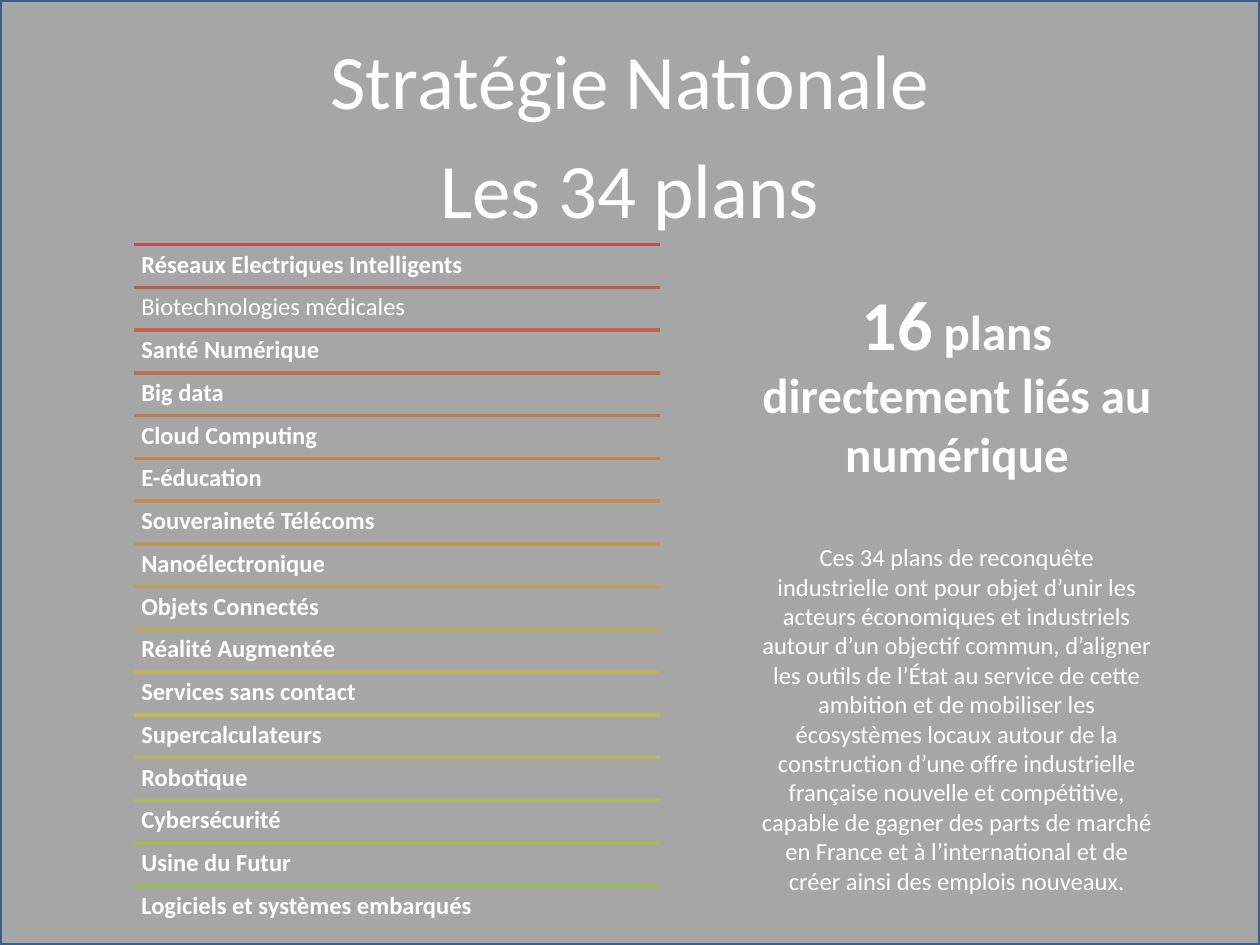
from colorsys import hls_to_rgb, rgb_to_hls
from dataclasses import dataclass

from lxml import etree
from pptx import Presentation
from pptx.dml.color import RGBColor
from pptx.enum.shapes import MSO_CONNECTOR, MSO_SHAPE
from pptx.enum.text import MSO_ANCHOR, PP_ALIGN
from pptx.oxml.ns import qn
from pptx.util import Cm, Pt

STRAIGHT = MSO_CONNECTOR.STRAIGHT
RECTANGLE = MSO_SHAPE.RECTANGLE
TOP, MIDDLE = MSO_ANCHOR.TOP, MSO_ANCHOR.MIDDLE
LEFT, CENTER = PP_ALIGN.LEFT, PP_ALIGN.CENTER

FONT = "Calibri"
COLORS = {
    "background": "A6A6A6",
    "border": "3A5F8C",
    "text": "FFFFFF",
    "first_line": "C0504D",
    "last_line": "9BBB59",
}
SLIDE_WIDTH, SLIDE_HEIGHT = 25.4, 19.05
LIST_LEFT, LIST_WIDTH = 2.7, 10.6
LIST_TOP, LIST_BOTTOM = 4.93, 18.72


@dataclass
class Box:
    left: float
    top: float
    width: float
    height: float


@dataclass
class Plan:
    name: str
    bold: bool = True


@dataclass
class TextRun:
    text: str
    size: int
    bold: bool = False


PLANS = [
    Plan("Réseaux Electriques Intelligents"),
    Plan("Biotechnologies médicales", bold=False),
    Plan("Santé Numérique"),
    Plan("Big data"),
    Plan("Cloud Computing"),
    Plan("E-éducation"),
    Plan("Souveraineté Télécoms"),
    Plan("Nanoélectronique"),
    Plan("Objets Connectés"),
    Plan("Réalité Augmentée"),
    Plan("Services sans contact"),
    Plan("Supercalculateurs"),
    Plan("Robotique"),
    Plan("Cybersécurité"),
    Plan("Usine du Futur"),
    Plan("Logiciels et systèmes embarqués"),
]
HEADLINE = [
    TextRun("16", 40, bold=True),
    TextRun(" plans directement liés au numérique", 28, bold=True),
]
EXPLANATION = TextRun(
    "Ces 34 plans de reconquête industrielle ont pour objet d’unir les acteurs "
    "économiques et industriels autour d’un objectif commun, d’aligner les outils "
    "de l’État au service de cette ambition et de mobiliser les écosystèmes locaux "
    "autour de la construction d’une offre industrielle française nouvelle et "
    "compétitive, capable de gagner des parts de marché en France et à "
    "l’international et de créer ainsi des emplois nouveaux.",
    14,
)


def blend(start: str, end: str, share: float) -> str:
    first, last = (
        rgb_to_hls(*(channel / 255 for channel in RGBColor.from_string(color)))
        for color in (start, end)
    )
    mixed = [low + (high - low) * share for low, high in zip(first, last)]
    return "".join(f"{round(channel * 255):02X}" for channel in hls_to_rgb(*mixed))


def add_background(slide) -> None:
    shape = slide.shapes.add_shape(RECTANGLE, 0, 0, Cm(SLIDE_WIDTH), Cm(SLIDE_HEIGHT))
    shape.shadow.inherit = False
    shape.fill.solid()
    shape.fill.fore_color.rgb = RGBColor.from_string(COLORS["background"])
    shape.line.color.rgb = RGBColor.from_string(COLORS["border"])
    shape.line.width = Pt(2)


def add_text(
    shapes,
    box: Box,
    paragraphs: list[list[TextRun]],
    alignment=CENTER,
    anchor=TOP,
    margin: float | None = None,
    line_spacing: float = 1.0,
    gap: int = 0,
) -> None:
    shape = shapes.add_textbox(Cm(box.left), Cm(box.top), Cm(box.width), Cm(box.height))
    frame = shape.text_frame
    frame.word_wrap = True
    frame.vertical_anchor = anchor
    if margin is not None:
        frame.margin_left = frame.margin_right = Cm(margin)
        frame.margin_top = frame.margin_bottom = Cm(margin)
    for index, runs in enumerate(paragraphs):
        paragraph = frame.add_paragraph() if index else frame.paragraphs[0]
        paragraph.alignment = alignment
        paragraph.line_spacing = line_spacing
        if index:
            paragraph.space_before = Pt(gap)
        for item in runs:
            run = paragraph.add_run()
            run.text = item.text
            run.font.name = FONT
            run.font.size = Pt(item.size)
            run.font.bold = item.bold
            run.font.color.rgb = RGBColor.from_string(COLORS["text"])


def add_rule(shapes, top: float, color: str) -> None:
    connector = shapes.add_connector(
        STRAIGHT, Cm(LIST_LEFT), Cm(top), Cm(LIST_LEFT + LIST_WIDTH), Cm(top)
    )
    connector.line.color.rgb = RGBColor.from_string(color)
    connector.line.width = Pt(2)
    etree.SubElement(connector._element.spPr, qn("a:effectLst"))


def add_plan_list(slide) -> None:
    group = slide.shapes.add_group_shape()
    row_height = (LIST_BOTTOM - LIST_TOP) / len(PLANS)
    for index, plan in enumerate(PLANS):
        top = LIST_TOP + index * row_height
        share = index / (len(PLANS) - 1)
        add_rule(group.shapes, top, blend(COLORS["first_line"], COLORS["last_line"], share))
        add_text(
            group.shapes,
            Box(LIST_LEFT, top, LIST_WIDTH, row_height),
            [[TextRun(plan.name, 14, plan.bold)]],
            alignment=LEFT,
            margin=0.15,
            line_spacing=0.9,
        )


def main() -> None:
    presentation = Presentation()
    presentation.slide_width = Cm(SLIDE_WIDTH)
    presentation.slide_height = Cm(SLIDE_HEIGHT)
    slide = presentation.slides.add_slide(presentation.slide_layouts[6])
    add_background(slide)
    add_text(
        slide.shapes,
        Box(1.27, 0, 22.86, 3.18),
        [[TextRun("Stratégie Nationale", 44)]],
        anchor=MIDDLE,
    )
    add_text(slide.shapes, Box(0, 2.72, SLIDE_WIDTH, 2.2), [[TextRun("Les 34 plans", 44)]])
    add_plan_list(slide)
    add_text(slide.shapes, Box(15.09, 5.54, 8.4, 13.94), [HEADLINE, [EXPLANATION]], gap=34)
    presentation.save("out.pptx")


if __name__ == "__main__":
    main()
